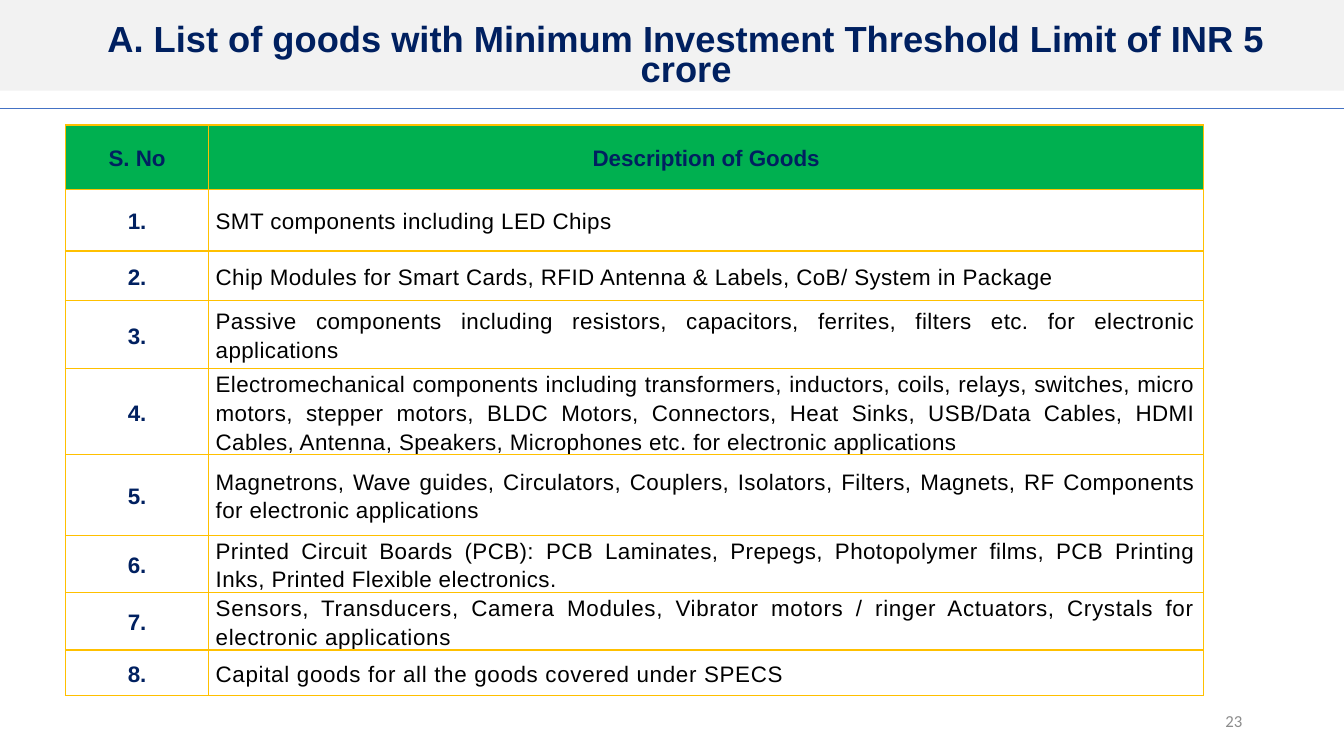
from lxml import etree
from pptx import Presentation
from pptx.dml.color import RGBColor
from pptx.enum.shapes import MSO_CONNECTOR, MSO_SHAPE
from pptx.enum.text import MSO_ANCHOR, MSO_AUTO_SIZE, PP_ALIGN
from pptx.oxml import parse_xml
from pptx.oxml.ns import qn
from pptx.util import Inches, Pt

CENTER, JUSTIFY, RIGHT = PP_ALIGN.CENTER, PP_ALIGN.JUSTIFY, PP_ALIGN.RIGHT
MIDDLE, BOTTOM = MSO_ANCHOR.MIDDLE, MSO_ANCHOR.BOTTOM
DRAWING = "http://schemas.openxmlformats.org/drawingml/2006/main"
NAVY, BLACK, WHITE = "002060", "000000", "FFFFFF"
GREEN, GOLD = "00B050", "FFC000"

# Content
TITLE = "A. List of goods with Minimum Investment Threshold Limit of INR 5 crore"
PAGE_NUMBER = "23"
HEADERS = ("S. No", "Description of Goods")
# Description, row height in inches, letter spacing in hundredths of a point
GOODS = [
    ("SMT components including LED Chips", 0.61, 30),
    ("Chip Modules for Smart Cards, RFID Antenna & Labels, CoB/ System in Package", 0.49, 30),
    ("Passive components including resistors, capacitors, ferrites, filters etc. "
     "for electronic applications", 0.68, 30),
    ("Electromechanical components including transformers, inductors, coils, relays, "
     "switches, micro motors, stepper motors, BLDC Motors, Connectors, Heat Sinks, "
     "USB/Data Cables, HDMI Cables, Antenna, Speakers, Microphones etc. "
     "for electronic applications", 0.7, 30),
    ("Magnetrons, Wave guides, Circulators, Couplers, Isolators, Filters, Magnets, "
     "RF Components for electronic applications", 0.8, 30),
    ("Printed Circuit Boards (PCB): PCB Laminates, Prepegs, Photopolymer films, "
     "PCB Printing Inks, Printed Flexible electronics.", 0.47, 30),
    ("Sensors, Transducers, Camera Modules, Vibrator motors / ringer Actuators, "
     "Crystals for electronic applications", 0.47, 50),
    ("Capital goods for all the goods covered under SPECS", 0.45, 50),
]
HEADER_HEIGHT = 0.64
COLUMN_WIDTHS = (1.42, 9.87)


def color(value):
    return RGBColor.from_string(value)


def write(frame, text, size, ink, align, font="Arial", bold=False, line_spacing=None):
    para = frame.paragraphs[0]
    span = para.add_run()
    span.text = text
    para.alignment = align
    para.line_spacing = line_spacing
    para.font.name, para.font.size, para.font.bold = font, Pt(size), bold
    para.font.color.rgb = color(ink)
    return span


def fill_cell(cell, text, fill, ink=NAVY, align=CENTER, bold=True, tracking=0):
    cell.margin_left = cell.margin_right = Inches(0.07)
    cell.margin_top = cell.margin_bottom = 0
    cell.vertical_anchor = MIDDLE
    properties = cell._tc.get_or_add_tcPr()
    for side in ("lnL", "lnR", "lnT", "lnB"):
        properties.append(parse_xml(
            f'<a:{side} xmlns:a="{DRAWING}" w="{Pt(1)}"><a:solidFill>'
            f'<a:srgbClr val="{GOLD}"/></a:solidFill></a:{side}>'))
    cell.fill.solid()
    cell.fill.fore_color.rgb = color(fill)
    span = write(cell.text_frame, text, 16, ink, align, bold=bold, line_spacing=1.15)
    if tracking:
        span._r.get_or_add_rPr().set("spc", str(tracking))


deck = Presentation()
deck.slide_width, deck.slide_height = Inches(13.33), Inches(7.5)
page = deck.slides.add_slide(deck.slide_layouts[5])

# Title over its grey band
title = page.shapes.title
title.left, title.top = Inches(0.55), Inches(0.19)
title.width, title.height = Inches(12.51), Inches(0.73)
frame = title.text_frame
frame.word_wrap, frame.auto_size = True, MSO_AUTO_SIZE.NONE
frame.vertical_anchor = BOTTOM
frame.margin_left = frame.margin_right = Inches(0.07)
frame.margin_top = frame.margin_bottom = Inches(0.04)
write(frame, TITLE, 25.9, NAVY, CENTER, bold=True, line_spacing=0.7)

band = page.shapes.add_shape(MSO_SHAPE.RECTANGLE, 0, 0, deck.slide_width, Inches(0.9))
band.shadow.inherit = False
band.fill.solid()
band.fill.fore_color.rgb = color("F2F2F2")
band.line.fill.background()
title.element.addprevious(band.element)

# Rule below the title
rule = page.shapes.add_connector(
    MSO_CONNECTOR.STRAIGHT, 0, Inches(1.08), deck.slide_width, Inches(1.08))
rule.line.color.rgb = color("4472C4")
rule.line.width = Pt(0.5)
etree.SubElement(rule.element.spPr, qn("a:effectLst"))

# Table of goods
heights = [HEADER_HEIGHT] + [height for _, height, _ in GOODS]
table = page.shapes.add_table(
    len(heights), len(COLUMN_WIDTHS), Inches(0.65), Inches(1.24),
    Inches(sum(COLUMN_WIDTHS)), Inches(sum(heights))).table
for column, width in zip(table.columns, COLUMN_WIDTHS):
    column.width = Inches(width)
for row, height in zip(table.rows, heights):
    row.height = Inches(height)
for index, header in enumerate(HEADERS):
    fill_cell(table.cell(0, index), header, GREEN)
for number, (description, _, tracking) in enumerate(GOODS, start=1):
    fill_cell(table.cell(number, 0), f"{number}.", WHITE)
    fill_cell(table.cell(number, 1), description, WHITE, BLACK, JUSTIFY, False, tracking)

# Page number
box = page.shapes.add_textbox(Inches(9.42), Inches(6.95), Inches(3), Inches(0.4))
box.text_frame.word_wrap = True
box.text_frame.vertical_anchor = MIDDLE
write(box.text_frame, PAGE_NUMBER, 12, "8C8C8C", RIGHT, font="Calibri")

deck.save("out.pptx")
